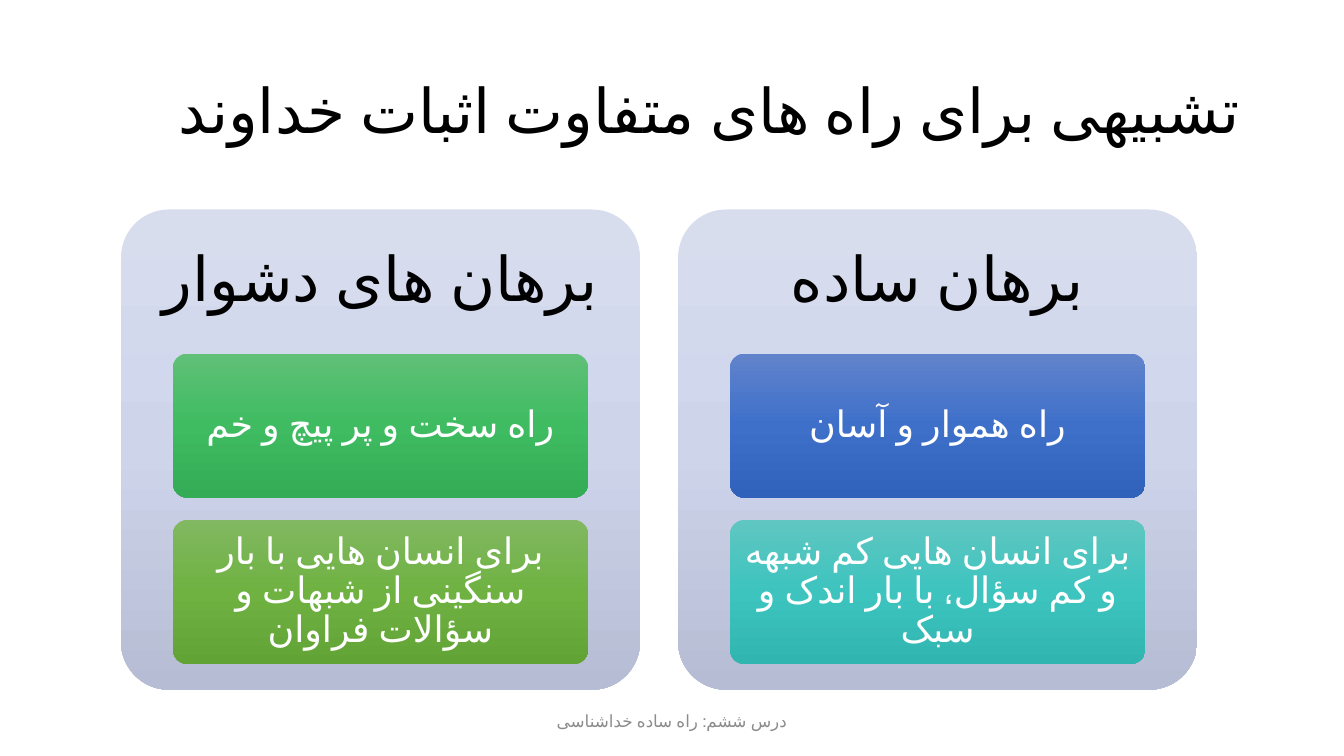
import copy

import pptx
import pptx.dml.color
import pptx.enum.shapes
import pptx.enum.text
import pptx.oxml.ns
import pptx.util

Cm = pptx.util.Cm
RGBColor = pptx.dml.color.RGBColor
Align = pptx.enum.text.PP_ALIGN

FONT = "Calibri"
LANGUAGE = "fa-IR"
BLACK = RGBColor(0x00, 0x00, 0x00)
WHITE = RGBColor(0xFF, 0xFF, 0xFF)
GREY = RGBColor(0x8C, 0x8C, 0x8C)
LAVENDER = (RGBColor(0xD8, 0xDD, 0xEE), RGBColor(0xCE, 0xD5, 0xEB), RGBColor(0xB5, 0xBC, 0xD3))
BLUE = (RGBColor(0x61, 0x83, 0xCB), RGBColor(0x3E, 0x70, 0xCA), RGBColor(0x30, 0x62, 0xBB))
TEAL = (RGBColor(0x60, 0xC6, 0xC1), RGBColor(0x3D, 0xC4, 0xBF), RGBColor(0x30, 0xB5, 0xB0))
GREEN = (RGBColor(0x60, 0xC0, 0x77), RGBColor(0x3F, 0xBC, 0x62), RGBColor(0x33, 0xAC, 0x55))
OLIVE = (RGBColor(0x81, 0xB8, 0x61), RGBColor(0x6F, 0xB2, 0x42), RGBColor(0x62, 0xA3, 0x36))

PANELS = [
    (17.09, "برهان ساده", [
        ("راه هموار و آسان", BLUE),
        ("برای انسان هایی کم شبهه و کم سؤال، با بار اندک و سبک", TEAL),
    ]),
    (3.05, "برهان های دشوار", [
        ("راه سخت و پر پیچ و خم", GREEN),
        ("برای انسان هایی با بار سنگینی از شبهات و سؤالات فراوان", OLIVE),
    ]),
]


def write_text(shape, text, size, color, align=Align.CENTER, spacing=0.9, inset=(0.25, 0.13)):
    across, down = map(Cm, inset)
    frame = shape.text_frame
    frame_format = {
        "word_wrap": True,
        "vertical_anchor": pptx.enum.text.MSO_ANCHOR.MIDDLE,
        "margin_left": across,
        "margin_right": across,
        "margin_top": down,
        "margin_bottom": down,
    }
    for name, value in frame_format.items():
        setattr(frame, name, value)
    para = frame.paragraphs[0]
    for name, value in {"alignment": align, "line_spacing": spacing}.items():
        setattr(para, name, value)
    para._p.get_or_add_pPr().set("rtl", "1")
    span = para.add_run()
    span.text = text
    for name, value in {"name": FONT, "size": pptx.util.Pt(size)}.items():
        setattr(span.font, name, value)
    span.font.color.rgb = color
    span._r.get_or_add_rPr().set("lang", LANGUAGE)


def add_label(page, box, text, size, color, **text_format):
    label = page.shapes.add_textbox(*map(Cm, box))
    write_text(label, text, size, color, **text_format)


def add_card(page, box, colors):
    card = page.shapes.add_shape(pptx.enum.shapes.MSO_SHAPE.ROUNDED_RECTANGLE, *map(Cm, box))
    card.adjustments[0] = 0.1
    card.shadow.inherit = False
    card.line.fill.background()
    card.fill.gradient()
    card.fill.gradient_angle = 270
    first_stop = card._element.spPr.find(".//" + pptx.oxml.ns.qn("a:gs"))
    first_stop.addnext(copy.deepcopy(first_stop))
    for stop, color, position in zip(card.fill.gradient_stops, colors, (0, 0.5, 1)):
        stop.color.rgb = color
        stop.position = position
    return card


def add_panel(page, box, heading, items):
    left, top, width, height = box
    row = 0.3 * height
    gap = 0.56
    add_card(page, box, LAVENDER)
    add_label(page, (left, top, width, row), heading, 44, BLACK, inset=(0.46, 0.46))
    for index, (text, colors) in enumerate(items):
        item_top = top + row + index * (row + gap)
        card = add_card(page, (left + 0.1 * width, item_top, 0.8 * width, row), colors)
        write_text(card, text, 26, WHITE, inset=(0.18, 0.13))


def main():
    deck = pptx.Presentation()
    deck.slide_width = Cm(33.87)
    deck.slide_height = Cm(19.05)
    page = deck.slides.add_slide(deck.slide_layouts[6])
    add_label(page, (2.33, 1.01, 29.21, 3.68), "تشبیهی برای راه های متفاوت اثبات خداوند",
              44, BLACK, align=Align.RIGHT)
    for left, heading, items in PANELS:
        add_panel(page, (left, 5.28, 13.08, 12.1), heading, items)
    add_label(page, (11.22, 17.65, 11.43, 1.02), "درس ششم: راه ساده خداشناسی",
              12, GREY, spacing=1.0)
    deck.save("out.pptx")


if __name__ == "__main__":
    main()
